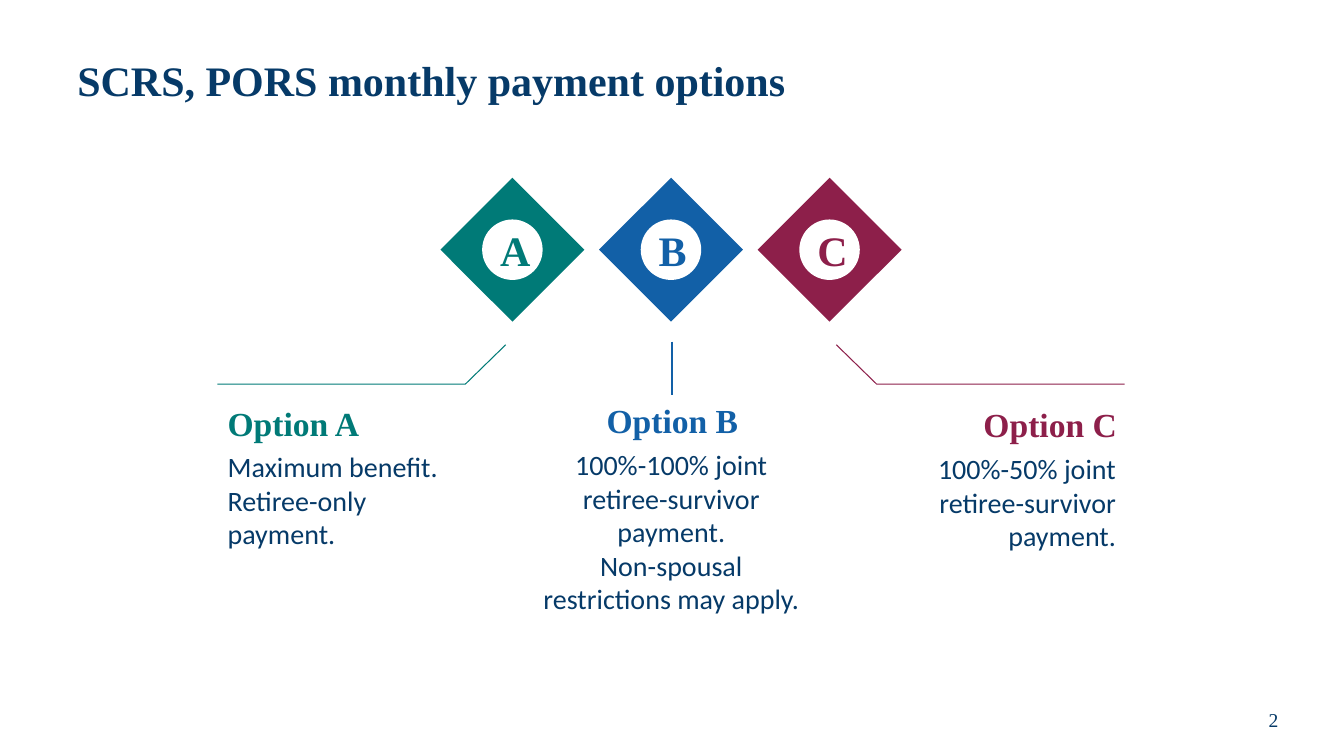
import pptx
import pptx.util
import pptx.oxml.ns
import lxml.etree
from pptx.dml.color import RGBColor
from pptx.enum.shapes import MSO_CONNECTOR, MSO_SHAPE
from pptx.enum.text import MSO_ANCHOR, MSO_AUTO_SIZE, PP_ALIGN

NAVY = RGBColor(0x06, 0x3A, 0x68)
TEAL = RGBColor(0x00, 0x7A, 0x77)
BLUE = RGBColor(0x12, 0x60, 0xA7)
WINE = RGBColor(0x8D, 0x1F, 0x4A)
WHITE = RGBColor(0xFF, 0xFF, 0xFF)
SERIF = "Times New Roman"
SANS = "Calibri"

WIDTH = pptx.util.Inches(13.33)
HEIGHT = pptx.util.Inches(7.5)
COLUMNS, ROWS = 40, 30
MIDDLE = 19.97
BADGE_PITCH = 4.72
BADGE_ROW = 9.91
HEADING_LEFT, HEADING_PITCH = 6.48, 10.95

OPTIONS = [
    ("A", TEAL, PP_ALIGN.LEFT, 16.12, (6.48, 17.44, 7.44, 4.32),
     ["Maximum benefit.", "Retiree-only payment."]),
    ("B", BLUE, PP_ALIGN.CENTER, 16, (15.78, 17.36, 8.4, 7.48),
     ["100%-100% joint retiree-survivor payment.",
      "Non-spousal restrictions may apply."]),
    ("C", WINE, PP_ALIGN.RIGHT, 16.16, (25.65, 17.52, 7.86, 8.36),
     ["100%-50% joint retiree-survivor payment."]),
]


def x(columns):
    return round(WIDTH * columns / COLUMNS)


def y(rows):
    return round(HEIGHT * rows / ROWS)


def box(left, top, width, height):
    return x(left), y(top), x(width), y(height)


def centred(column, row, width, height):
    return box(column - width / 2, row - height / 2, width, height)


def write(tf, lines, font, size, color, bold=False, align=PP_ALIGN.LEFT,
          anchor=MSO_ANCHOR.MIDDLE):
    tf.word_wrap = True
    tf.auto_size = MSO_AUTO_SIZE.NONE
    tf.vertical_anchor = anchor
    for i, line in enumerate(lines):
        p = tf.add_paragraph() if i else tf.paragraphs[0]
        p.alignment = align
        r = p.add_run()
        r.text = line
        r.font.name = font
        r.font.size = pptx.util.Pt(size)
        r.font.bold = bold
        r.font.color.rgb = color


def add_text(s, place, lines, font, size, color, margin=None, **style):
    tf = s.shapes.add_textbox(*place).text_frame
    write(tf, lines, font, size, color, **style)
    if margin is not None:
        tf.margin_left = tf.margin_right = pptx.util.Inches(margin)
        tf.margin_top = tf.margin_bottom = pptx.util.Inches(margin)


def add_filled(s, kind, place, color, rotation=0):
    sp = s.shapes.add_shape(kind, *place)
    sp.shadow.inherit = False
    sp.fill.solid()
    sp.fill.fore_color.rgb = color
    sp.line.fill.background()
    sp.rotation = rotation


def add_title(s, text):
    sp = s.shapes.title
    sp.left, sp.top, sp.width, sp.height = box(2, 1, 36, 4.6)
    write(sp.text_frame, [text], SERIF, 30, NAVY, bold=True)
    sp.text_frame.paragraphs[0].line_spacing = 0.9


def add_badge(s, letter, color, column):
    add_filled(s, MSO_SHAPE.RECTANGLE,
               centred(column, BADGE_ROW, 3.03, 4.04), color, 45)
    add_filled(s, MSO_SHAPE.OVAL, centred(column, BADGE_ROW, 1.8, 2.4), WHITE)
    add_text(s, centred(column, BADGE_ROW, 1.32, 2.44), [letter], SERIF, 30,
             color, bold=True, align=PP_ALIGN.CENTER)


def add_straight_leader(s, color):
    c = s.shapes.add_connector(MSO_CONNECTOR.STRAIGHT, x(20), y(13.56),
                               x(20), y(15.68))
    c.line.color.rgb = color
    c.line.width = pptx.util.Pt(0.75)
    lxml.etree.SubElement(c._element.spPr, pptx.oxml.ns.qn("a:effectLst"))


def add_bent_leader(s, color, side):
    start, bend, end = [(x(MIDDLE + side * reach), y(row)) for reach, row in
                        ((4.92, 13.68), (6.12, 15.24), (13.5, 15.24))]
    builder = s.shapes.build_freeform(*start)
    builder.add_line_segments([bend, end], close=False)
    sp = builder.convert_to_shape()
    sp.shadow.inherit = False
    sp.fill.background()
    sp.line.color.rgb = color
    sp.line.width = pptx.util.Pt(0.75)


def add_option(s, index, letter, color, align, heading_row, body, lines):
    side = index - 1
    add_badge(s, letter, color, MIDDLE + side * BADGE_PITCH)
    if side:
        add_bent_leader(s, color, side)
    else:
        add_straight_leader(s, color)
    heading = box(HEADING_LEFT + index * HEADING_PITCH, heading_row, 5.16, 1.36)
    add_text(s, heading, ["Option " + letter], SERIF, 24, color, 0.1,
             bold=True, align=align)
    add_text(s, box(*body), lines, SANS, 20, NAVY, 0.1, align=align,
             anchor=MSO_ANCHOR.TOP)


def main():
    prs = pptx.Presentation()
    prs.slide_width, prs.slide_height = WIDTH, HEIGHT
    s = prs.slides.add_slide(prs.slide_layouts.get_by_name("Title Only"))
    add_title(s, "SCRS, PORS monthly payment options")
    for index, option in enumerate(OPTIONS):
        add_option(s, index, *option)
    add_text(s, box(36.15, 27.56, 3.51, 2), ["2"], SERIF, 14, NAVY,
             align=PP_ALIGN.CENTER)
    prs.save("out.pptx")


if __name__ == "__main__":
    main()
